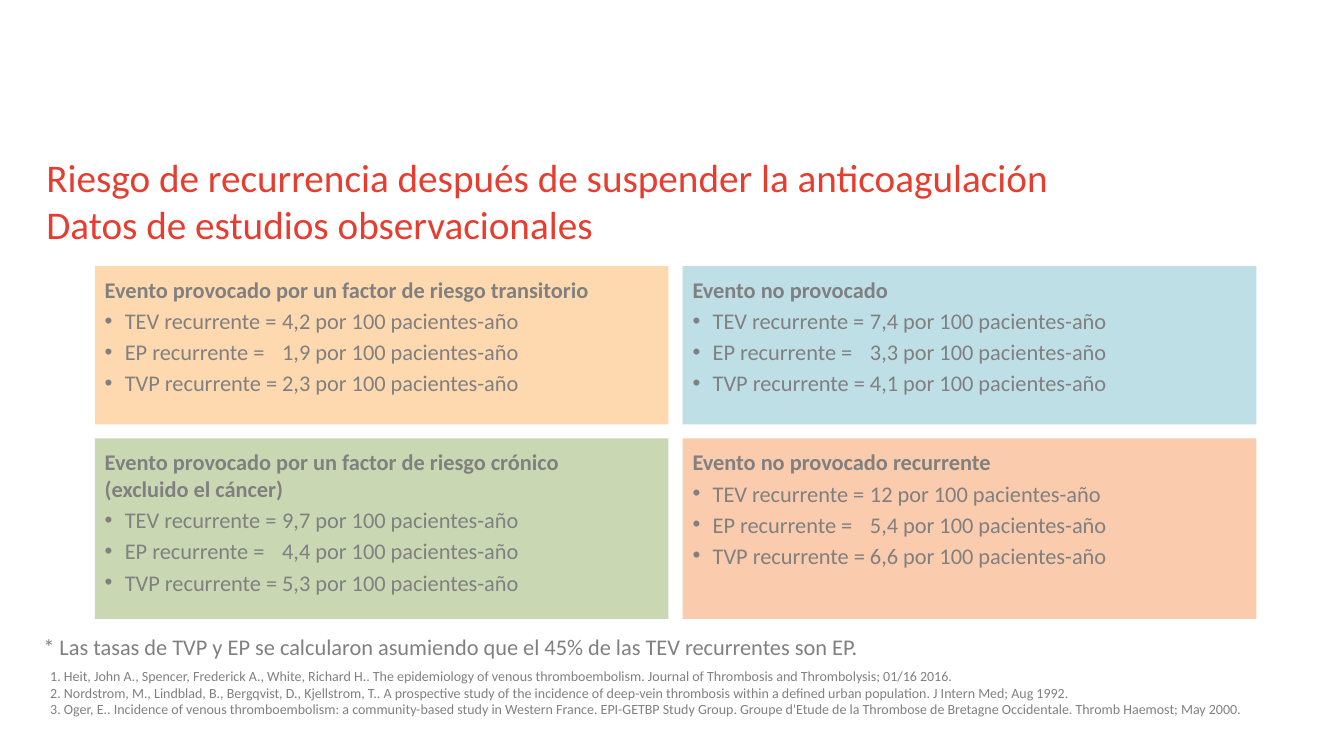
from dataclasses import dataclass

from lxml.etree import SubElement
from pptx import Presentation
from pptx.dml.color import RGBColor
from pptx.enum.shapes import MSO_SHAPE
from pptx.enum.text import MSO_ANCHOR, PP_ALIGN
from pptx.oxml.ns import qn
from pptx.util import Pt

PX = 9144  # 100 px to the inch


@dataclass(frozen=True)
class Theme:
    font: str = "Calibri"
    red: str = "E53E31"
    grey: str = "808080"
    orange: str = "FED9B0"
    blue: str = "BFDFE6"
    green: str = "C9D8B3"
    salmon: str = "FACBAC"
    title: int = 28
    body: int = 16
    reference: int = 10


theme = Theme()


def write(box, lines, size=theme.body, color=theme.grey, heading=False,
          inset=(0, 0), gap=0):
    """Fill a box with lines; with a heading, the later lines are bullets."""
    frame = box.text_frame
    frame.word_wrap = True
    frame.vertical_anchor = MSO_ANCHOR.TOP
    frame.margin_left = frame.margin_right = inset[0] * PX
    frame.margin_top = frame.margin_bottom = inset[1] * PX
    for index, line in enumerate(lines):
        para = frame.add_paragraph() if index else frame.paragraphs[0]
        para.text = line
        para.alignment = PP_ALIGN.LEFT
        if index:
            para.space_before = Pt(gap)
        if heading and index:
            props = para._p.get_or_add_pPr()
            props.set("marL", str(20 * PX))
            props.set("indent", str(-20 * PX))
            SubElement(props, qn("a:buFont"), typeface="Arial")
            SubElement(props, qn("a:buChar"), char="•")
            # Two stops: one counted from the indent, one from the box edge
            stops = SubElement(props, qn("a:tabLst"))
            for stop in (156, 176):
                SubElement(stops, qn("a:tab"), pos=str(stop * PX), algn="l")
        for span in para.runs:
            span.font.name = theme.font
            span.font.size = Pt(size)
            span.font.bold = heading and index == 0
            span.font.color.rgb = RGBColor.from_string(color)


deck = Presentation()
deck.slide_width, deck.slide_height = 1333 * PX, 750 * PX
page = deck.slides.add_slide(deck.slide_layouts[6])

# Title
title = page.shapes.add_textbox(46 * PX, 147 * PX, 1200 * PX, 78 * PX)
write(title, ["Riesgo de recurrencia después de suspender la anticoagulación\v"
              "Datos de estudios observacionales"],
      size=theme.title, color=theme.red, inset=(0, 5))

# Four panels: heading, fill and recurrence rates for TEV, EP and TVP
LEFT, COLUMN_STEP, PANEL_WIDTH = 94, 583, 569
rows = [
    (264, 157, [
        ("Evento provocado por un factor de riesgo transitorio",
         theme.orange, ("4,2", "1,9", "2,3")),
        ("Evento no provocado", theme.blue, ("7,4", "3,3", "4,1")),
    ]),
    (435, 179, [
        ("Evento provocado por un factor de riesgo crónico\v(excluido el cáncer)",
         theme.green, ("9,7", "4,4", "5,3")),
        ("Evento no provocado recurrente",
         theme.salmon, ("12", "5,4", "6,6")),
    ]),
]
for top, height, panels in rows:
    for column, (heading, fill, rates) in enumerate(panels):
        panel = page.shapes.add_shape(
            MSO_SHAPE.RECTANGLE, (LEFT + column * COLUMN_STEP) * PX, top * PX,
            PANEL_WIDTH * PX, height * PX)
        panel.shadow.inherit = False
        panel.fill.solid()
        panel.fill.fore_color.rgb = RGBColor.from_string(fill)
        panel.line.fill.background()
        bullets = [f"{event} recurrente =\t{rate} por 100 pacientes-año"
                   for event, rate in zip(("TEV", "EP", "TVP"), rates)]
        write(panel, [heading, *bullets], heading=True, inset=(10, 10), gap=3)

# Note on the rates
note = page.shapes.add_textbox(43 * PX, 628 * PX, 1155 * PX, 45 * PX)
write(note, ["* Las tasas de TVP y EP se calcularon asumiendo que el 45% "
             "de las TEV recurrentes son EP."])

# References
references = page.shapes.add_textbox(40 * PX, 657 * PX, 1290 * PX, 61 * PX)
write(references, [
    "1. Heit, John A., Spencer, Frederick A., White, Richard H.. The epidemiology of "
    "venous thromboembolism. Journal of Thrombosis and Thrombolysis; 01/16 2016.",
    "2. Nordstrom, M., Lindblad, B., Bergqvist, D., Kjellstrom, T.. A prospective study "
    "of the incidence of deep-vein thrombosis within a defined urban population. "
    "J Intern Med; Aug 1992.",
    "3. Oger, E.. Incidence of venous thromboembolism: a community-based study in "
    "Western France. EPI-GETBP Study Group. Groupe d'Etude de la Thrombose de Bretagne "
    "Occidentale. Thromb Haemost; May 2000.",
], size=theme.reference, inset=(10, 5))

deck.save("out.pptx")
